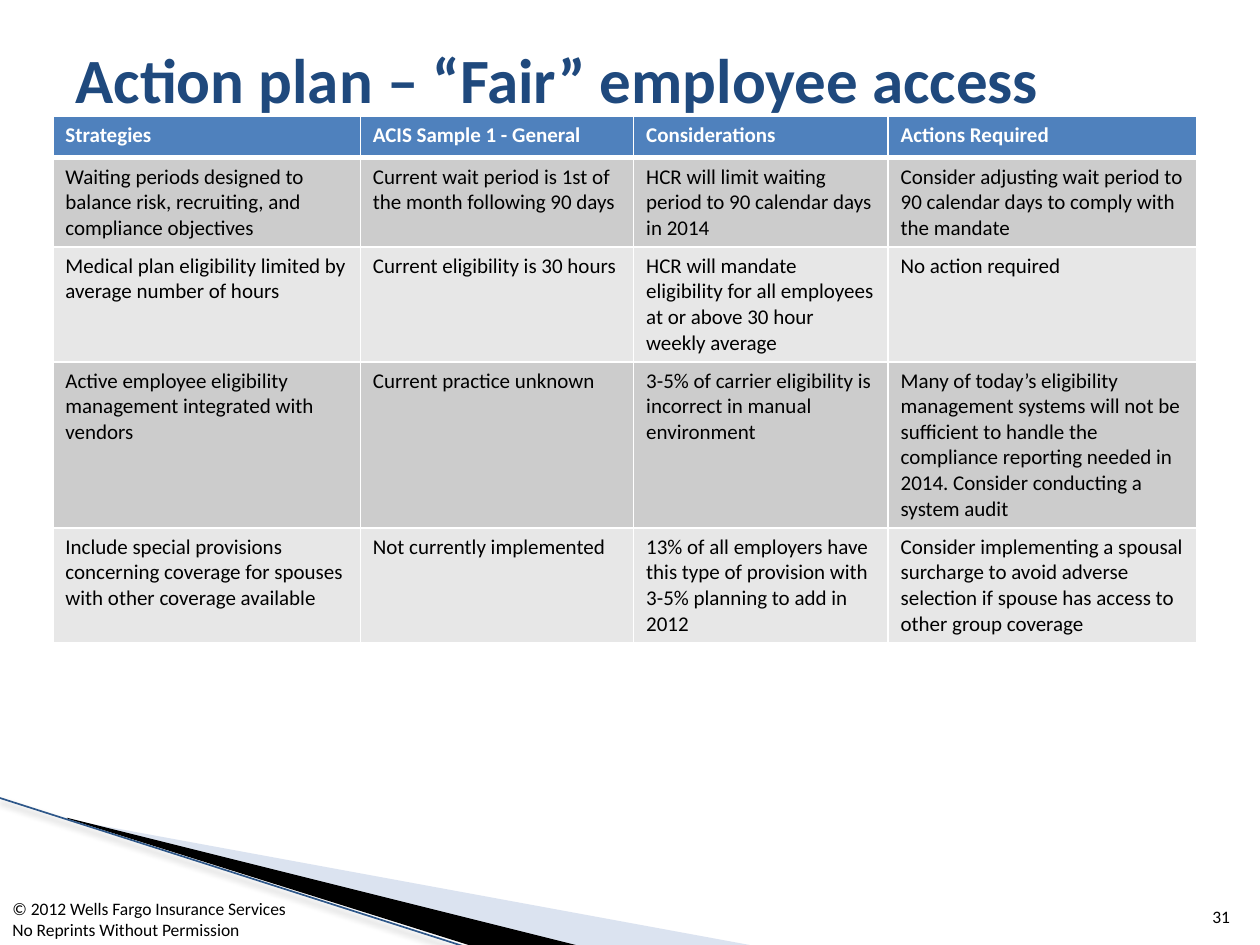
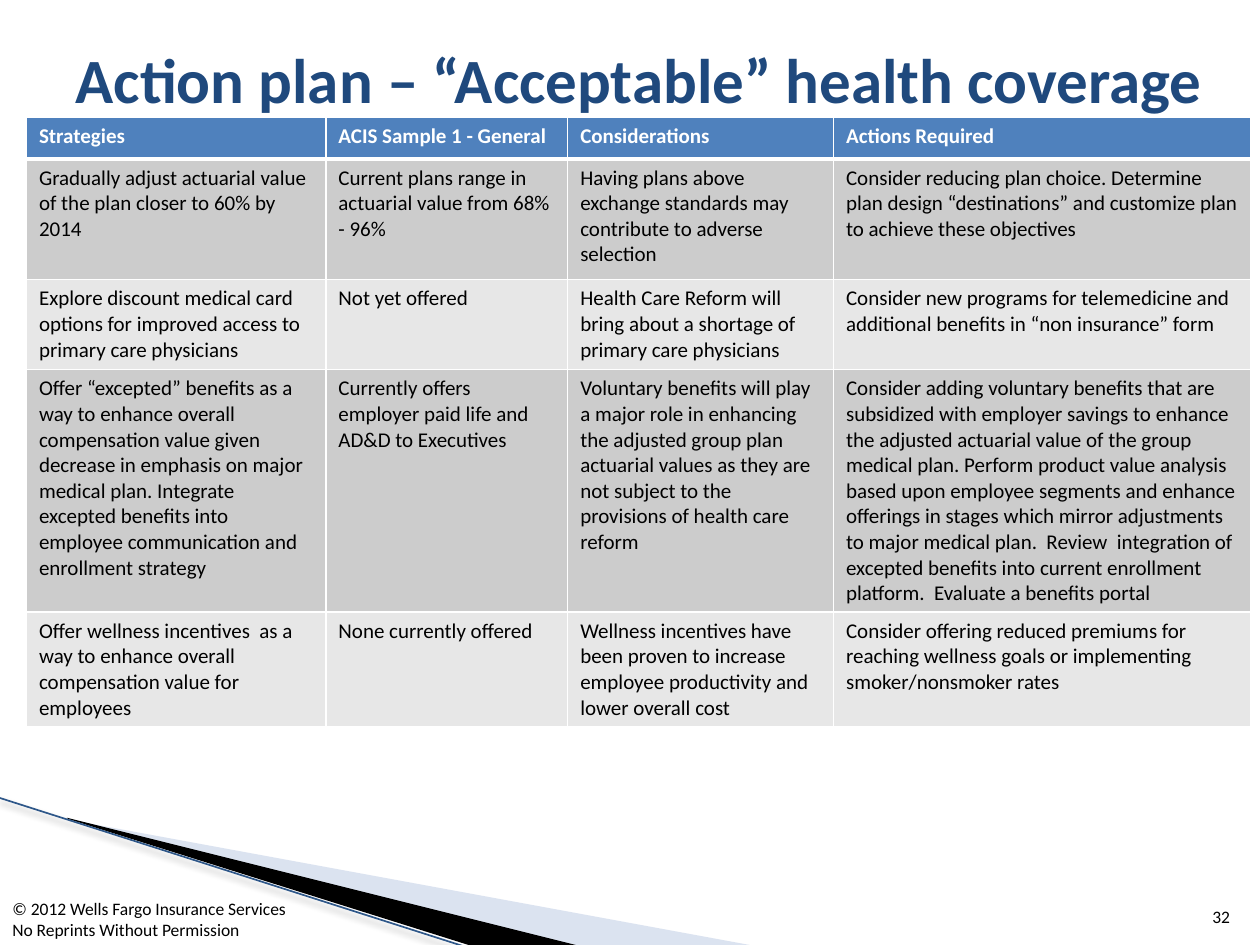
from lxml.etree import SubElement
from pptx import Presentation
from pptx.dml.color import RGBColor
from pptx.enum.text import MSO_ANCHOR, MSO_AUTO_SIZE, PP_ALIGN
from pptx.oxml import parse_xml
from pptx.oxml.ns import nsdecls, qn
from pptx.util import Pt

NAVY = RGBColor(0x1F, 0x49, 0x7D)
BLUE = RGBColor(0x4F, 0x81, 0xBD)
PALE = RGBColor(0xA7, 0xB9, 0xDB)
EDGE = RGBColor(0x2E, 0x57, 0x89)
DARK = RGBColor(0xCC, 0xCC, 0xCC)
LIGHT = RGBColor(0xE7, 0xE7, 0xE7)
BLACK = RGBColor(0, 0, 0)
WHITE = RGBColor(0xFF, 0xFF, 0xFF)

FONT = "Calibri"
WIDE, HIGH = 720, 540
HEADS = ["Strategies", "ACIS Sample 1 - General", "Considerations", "Actions Required"]
RIGHTS = ["© 2012 Wells Fargo Insurance Services", "No Reprints Without Permission"]

FAIR = [
    ["Waiting periods designed to balance risk, recruiting, and compliance objectives",
     "Current wait period is 1st of the month following 90 days",
     "HCR will limit waiting period to 90 calendar days in 2014",
     "Consider adjusting wait period to 90 calendar days to comply with the mandate"],
    ["Medical plan eligibility limited by average number of hours",
     "Current eligibility is 30 hours",
     "HCR will mandate eligibility for all employees at or above 30 hour weekly average",
     "No action required"],
    ["Active employee eligibility management integrated with vendors",
     "Current practice unknown",
     "3-5% of carrier eligibility is incorrect in manual environment",
     "Many of today’s eligibility management systems will not be sufficient to handle "
     "the compliance reporting needed in 2014. Consider conducting a system audit"],
    ["Include special provisions concerning coverage for spouses with other coverage available",
     "Not currently implemented",
     "13% of all employers have this type of provision with 3-5% planning to add in 2012",
     "Consider implementing a spousal surcharge to avoid adverse selection if spouse "
     "has access to other group coverage"],
]

HEALTH = [
    ["Gradually adjust actuarial value of the plan closer to 60% by 2014",
     "Current plans range in actuarial value from 68% - 96%",
     "Having plans above exchange standards may contribute to adverse selection",
     "Consider reducing plan choice. Determine plan design “destinations” and customize "
     "plan to achieve these objectives"],
    ["Explore discount medical card options for improved access to primary care physicians",
     "Not yet offered",
     "Health Care Reform will bring about a shortage of primary care physicians",
     "Consider new programs for telemedicine and additional benefits in “non insurance” form"],
    ["Offer “excepted” benefits as a way to enhance overall compensation value given "
     "decrease in emphasis on major medical plan. Integrate excepted benefits into "
     "employee communication and enrollment strategy",
     "Currently offers employer paid life and AD&D to Executives",
     "Voluntary benefits will play a major role in enhancing the adjusted group plan "
     "actuarial values as they are not subject to the provisions of health care reform",
     "Consider adding voluntary benefits that are subsidized with employer savings to "
     "enhance the adjusted actuarial value of the group medical plan. Perform product "
     "value analysis based upon employee segments and enhance offerings in stages which "
     "mirror adjustments to major medical plan.  Review  integration of excepted benefits "
     "into current enrollment platform.  Evaluate a benefits portal"],
    ["Offer wellness incentives  as a way to enhance overall compensation value for employees",
     "None currently offered",
     "Wellness incentives have been proven to increase employee productivity and lower "
     "overall cost",
     "Consider offering reduced premiums for reaching wellness goals or implementing "
     "smoker/nonsmoker rates"],
]


class Deck:
    def __init__(self):
        self.show = Presentation()
        self.show.slide_width, self.show.slide_height = Pt(WIDE), Pt(HIGH)
        self.slide = None

    def start(self, title, number):
        """Add a slide with its title, bands and footer."""
        self.slide = self.show.slides.add_slide(self.show.slide_layouts[5])
        self.title(title)
        self.band([(39.6, 468.5), (428.4, HIGH), (328.3, HIGH), (39.6, 468)], PALE, 40)
        self.band([(38.2, 467.3), (329, HIGH), (267.8, HIGH), (38.9, 468)], BLACK)
        self.line((-0.7, 455.8), (267.1, 541.4))
        self.note([str(number)], 681.1, 504.7, 28.8, 28.8, PP_ALIGN.RIGHT, MSO_ANCHOR.BOTTOM)
        self.note(RIGHTS, 0, 509.8, 360, 31.7)

    def run(self, para, text, size, color, bold=False):
        font = para.add_run()
        font.text = text
        font = font.font
        font.name, font.size, font.bold = FONT, Pt(size), bold
        font.color.rgb = color

    def title(self, text):
        head = self.slide.shapes.title
        head.left, head.top, head.width, head.height = Pt(36), Pt(22.8), Pt(684), Pt(44)
        frame = head.text_frame
        frame.auto_size = MSO_AUTO_SIZE.NONE
        frame.vertical_anchor = MSO_ANCHOR.MIDDLE
        frame.margin_top = frame.margin_bottom = 0
        para = frame.paragraphs[0]
        para.alignment = PP_ALIGN.LEFT
        self.run(para, text, 36, NAVY, True)

    def note(self, lines, left, top, width, height, align=PP_ALIGN.LEFT, anchor=MSO_ANCHOR.TOP):
        box = self.slide.shapes.add_textbox(Pt(left), Pt(top), Pt(width), Pt(height))
        frame = box.text_frame
        frame.word_wrap = True
        frame.vertical_anchor = anchor
        for i, text in enumerate(lines):
            para = frame.add_paragraph() if i else frame.paragraphs[0]
            para.alignment = align
            self.run(para, text, 10, BLACK)

    def band(self, points, color, alpha=100):
        first, *rest = [(Pt(x), Pt(y)) for x, y in points]
        build = self.slide.shapes.build_freeform(*first)
        build.add_line_segments(rest)
        shape = build.convert_to_shape()
        shape.shadow.inherit = False
        shape.fill.solid()
        shape.fill.fore_color.rgb = color
        shape.line.fill.background()
        if alpha < 100:
            tint = shape.fill._xPr.find(".//" + qn("a:srgbClr"))
            SubElement(tint, qn("a:alpha"), val=str(alpha * 1000))

    def line(self, start, end):
        """Draw the edge of the bands with a soft shadow below."""
        edge = self.slide.shapes.add_connector(1, *[Pt(v) for v in start + end])
        edge.line.color.rgb = EDGE
        edge.line.width = Pt(0.95)
        edge._element.spPr.append(parse_xml(
            f'<a:effectLst {nsdecls("a")}><a:outerShdw blurRad="{Pt(4)}" dist="{Pt(3)}" '
            'dir="5400000" rotWithShape="0"><a:srgbClr val="000000">'
            '<a:alpha val="35000"/></a:srgbClr></a:outerShdw></a:effectLst>'))

    def rule(self, cell, row):
        """Give a cell white borders, thick under the header."""
        widths = {"L": 1, "R": 1, "T": 3 if row == 1 else 1, "B": 1 if row else 3}
        props = cell._tc.get_or_add_tcPr()
        for i, (side, width) in enumerate(widths.items()):
            props.insert(i, parse_xml(
                f'<a:ln{side} {nsdecls("a")} w="{Pt(width)}"><a:solidFill>'
                f'<a:srgbClr val="{WHITE}"/></a:solidFill></a:ln{side}>'))

    def table(self, left, top, cols, rows, body):
        grid = self.slide.shapes.add_table(
            len(rows), len(cols), Pt(left), Pt(top), Pt(sum(cols)), Pt(sum(rows))).table
        grid.horz_banding = False
        for col, width in zip(grid.columns, cols):
            col.width = Pt(width)
        for r, (row, high, texts) in enumerate(zip(grid.rows, rows, [HEADS] + body)):
            row.height = Pt(high)
            fill = (DARK if r % 2 else LIGHT) if r else BLUE
            for cell, text in zip(row.cells, texts):
                cell.fill.solid()
                cell.fill.fore_color.rgb = fill
                self.rule(cell, r)
                para = cell.text_frame.paragraphs[0]
                self.run(para, text, 12, BLACK if r else WHITE, r == 0)


def main():
    deck = Deck()
    deck.start("Action plan – “Fair” employee access", 31)
    deck.table(30.2, 66.2, [175.7, 156.2, 145.4, 176.4], [24, 51, 65.6, 95, 65.6], FAIR)
    deck.start("Action plan – “Acceptable” health coverage", 32)
    deck.table(15.1, 67, [171.1, 138.2, 151.9, 238.3], [23.8, 69, 51.5, 138.5, 65.6], HEALTH)
    deck.show.save("out.pptx")


if __name__ == "__main__":
    main()
